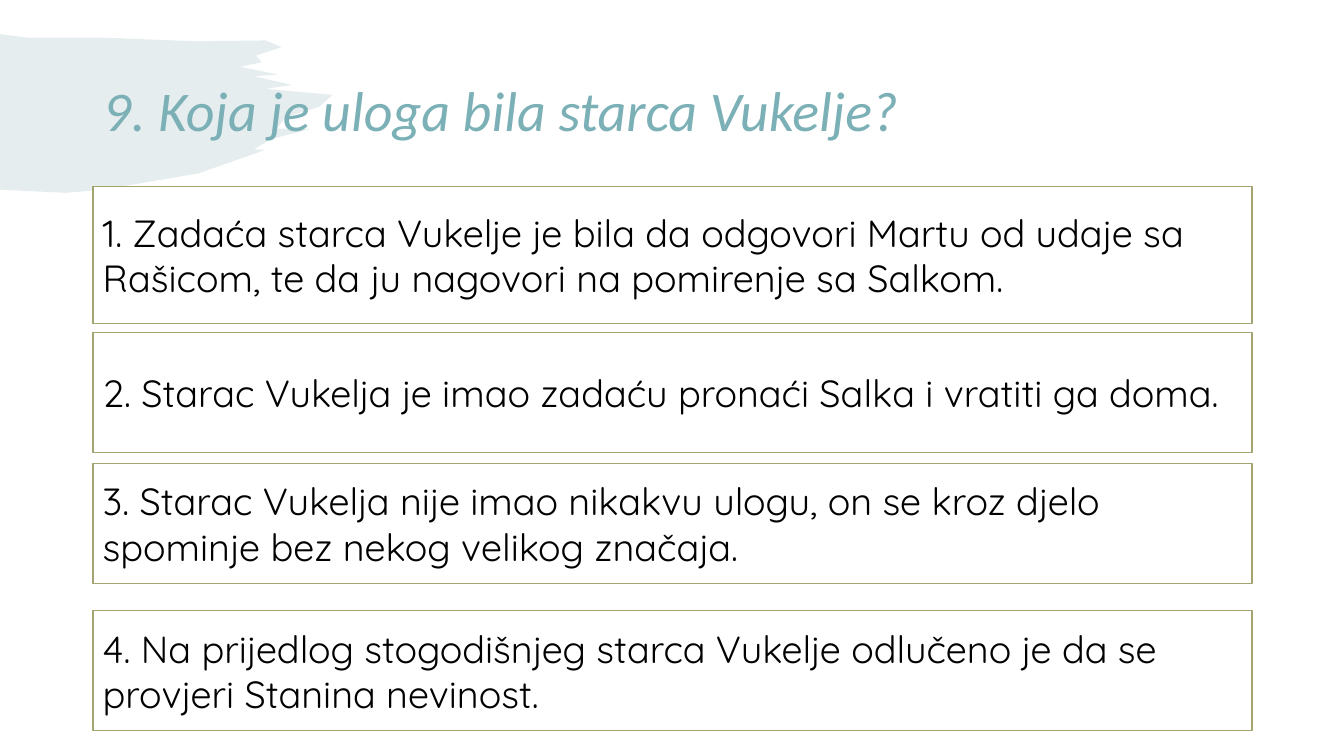
from pptx import Presentation
from pptx.dml.color import RGBColor
from pptx.enum.shapes import MSO_SHAPE as Preset
from pptx.enum.text import MSO_ANCHOR as Anchor, MSO_AUTO_SIZE as AutoSize, PP_ALIGN as Align
from pptx.oxml.ns import qn
from pptx.util import Cm, Pt
from lxml.etree import SubElement
from dataclasses import dataclass

# Content
TITLE = "9. Koja je uloga bila starca Vukelje?"
ANSWERS = [  # text, top and height in cm
    ("1. Zadaća starca Vukelje je bila da odgovori Martu od udaje sa Rašicom, "
     "te da ju nagovori na pomirenje sa Salkom.", 4.7, 3.45),
    ("2. Starac Vukelja je imao zadaću pronaći Salka i vratiti ga doma.", 8.38, 3.02),
    ("3. Starac Vukelja nije imao nikakvu ulogu, on se kroz djelo spominje "
     "bez nekog velikog značaja.", 11.68, 3.02),
    ("4. Na prijedlog stogodišnjeg starca Vukelje odlučeno je da se provjeri "
     "Stanina nevinost.", 15.39, 3.02),
]

# Brush stroke corners in cm: smooth top, ragged right end, smooth bottom
BRUSH = [
    (0, 0.86), (0.7, 0.95), (2.6, 0.95), (4.9, 1.04), (6.7, 1.02), (7.1, 1.19),
    (6.45, 1.4), (6.6, 1.57), (6.05, 1.68), (7, 1.88), (6.4, 1.92), (7.35, 2.14),
    (6.7, 2.24), (8.38, 2.39), (8.05, 2.69), (7.2, 2.95), (6.98, 3.24), (7.82, 3.25),
    (6.85, 3.5), (6.4, 3.76), (6.68, 3.78), (5, 4.37), (2.6, 4.78), (1.65, 4.86), (0, 4.78),
]


@dataclass(frozen=True)
class Theme:
    brush: RGBColor = RGBColor(0x82, 0xA8, 0xAB)
    brush_alpha: int = 20
    title: RGBColor = RGBColor(0x7B, 0xB0, 0xB6)
    text: RGBColor = RGBColor(0, 0, 0)
    box: RGBColor = RGBColor(0xFF, 0xFF, 0xFF)
    border: RGBColor = RGBColor(0xA4, 0xA4, 0x70)
    title_size: int = 40
    answer_size: int = 27


THEME = Theme()
TITLE_FONT = {"name": "Calibri", "size": Pt(THEME.title_size), "italic": True, "bold": False}
ANSWER_FONT = {"name": "Quicksand", "size": Pt(THEME.answer_size)}
FRAME = {"word_wrap": True, "auto_size": AutoSize.NONE, "vertical_anchor": Anchor.MIDDLE}
LEFT, WIDTH = Cm(2.34), Cm(29.21)


def apply(target, values):
    for name, value in values.items():
        setattr(target, name, value)


def write(shape, text, font, color, spacing):
    apply(shape.text_frame, FRAME)
    para = shape.text_frame.paragraphs[0]
    apply(para, {"alignment": Align.LEFT, **spacing})
    span = para.add_run()
    span.text = text
    apply(span.font, font)
    span.font.color.rgb = color


def paint(shape, color):
    shape.shadow.inherit = False
    shape.fill.solid()
    shape.fill.fore_color.rgb = color


deck = Presentation()
deck.slide_width, deck.slide_height = Cm(33.87), Cm(19.05)
page = deck.slides.add_slide(deck.slide_layouts[5])

# Title
title = page.shapes.title
apply(title, {"left": LEFT, "top": Cm(1.02), "width": WIDTH, "height": Cm(3.68)})
write(title, TITLE, TITLE_FONT, THEME.title, {"line_spacing": 0.9})

# Brush stroke behind the title
outline = [(Cm(x), Cm(y)) for x, y in BRUSH]
builder = page.shapes.build_freeform(*outline[0])
builder.add_line_segments(outline[1:], close=True)
brush = builder.convert_to_shape()
paint(brush, THEME.brush)
brush.line.fill.background()
brush_color = brush.element.spPr.find(qn("a:solidFill")).find(qn("a:srgbClr"))
SubElement(brush_color, qn("a:alpha"), val=str(THEME.brush_alpha * 1000))
title.element.addprevious(brush.element)

# Answer boxes, the first one with space above its text
for number, (text, top, height) in enumerate(ANSWERS):
    box = page.shapes.add_shape(Preset.ACTION_BUTTON_CUSTOM, LEFT, Cm(top), WIDTH, Cm(height))
    paint(box, THEME.box)
    box.line.color.rgb = THEME.border
    box.line.width = Pt(1)
    spacing = {"space_before": Pt(10)} if number == 0 else {}
    write(box, text, ANSWER_FONT, THEME.text, spacing)

deck.save("out.pptx")
